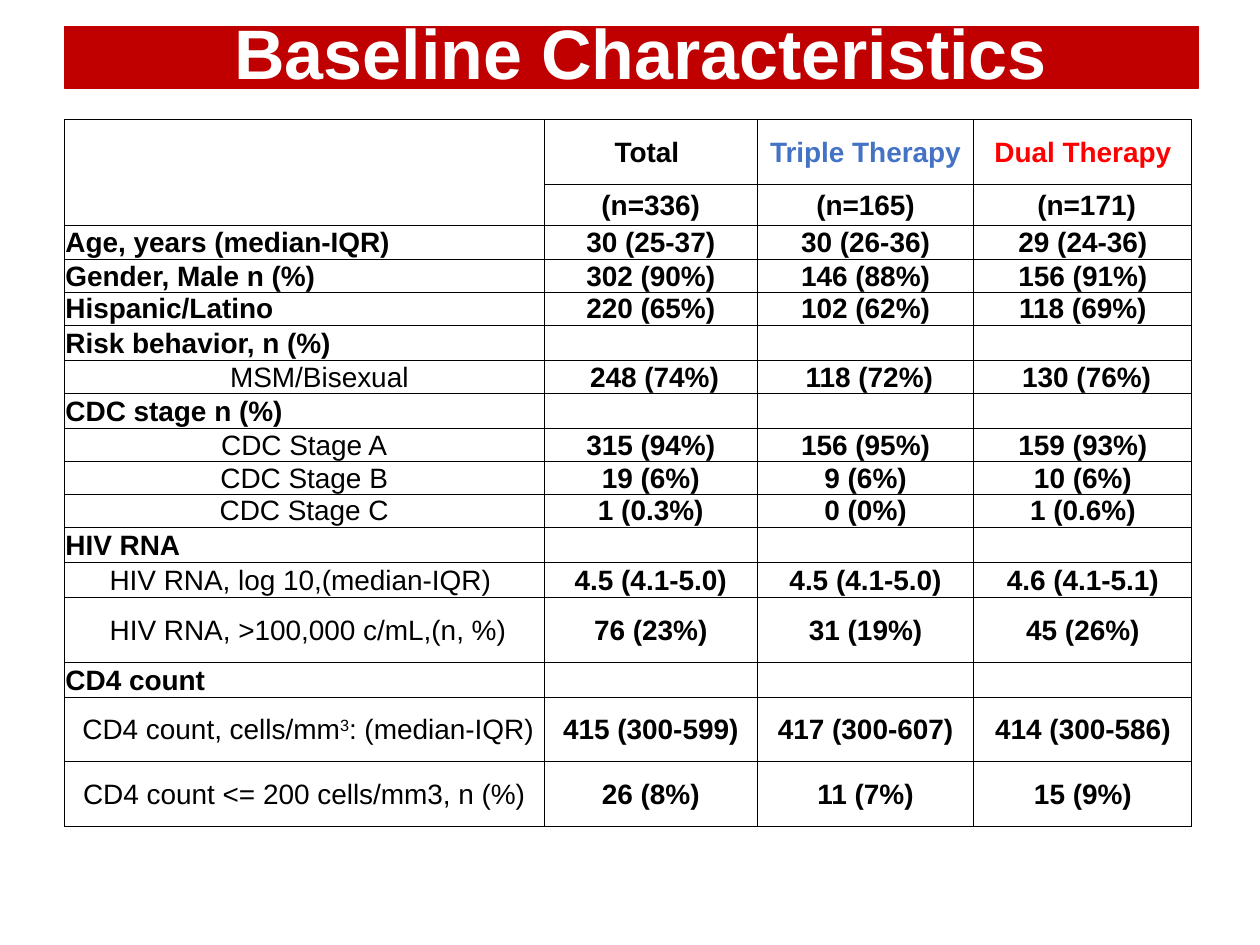
from lxml.etree import SubElement as Sub
from pptx import Presentation
from pptx.dml.color import RGBColor as Rgb
from pptx.enum.text import MSO_ANCHOR as Anchor, MSO_AUTO_SIZE as Fit, PP_ALIGN as Align
from pptx.oxml.ns import qn
from pptx.util import Inches, Pt

WIDE, HIGH = Inches(10), Inches(7.5)
FONT = "Arial"
HUES = {"bar": "C00000", "white": "FFFFFF", "ink": "000000",
        "triple": "4472C4", "dual": "FF0000"}

# Boxes are left, top, width and height in percent of the slide.
TITLE_BOX = (5.1, 2.8, 90, 6.53)
TABLE_BOX = (5.1, 12.67, 89.5, 73.6)

COLS = (3.81, 1.69, 1.72, 1.73)
SLIM, TALL = 0.26, 0.51
SPACE = 0.06  # one space of the table text, in inches

# Each row: height, label style, cells. Text between ^ marks is raised.
HEAD, ITEM = "head", "item"
ROWS = [
    (TALL, HEAD, "", "Total", "Triple Therapy", "Dual Therapy"),
    (0.33, HEAD, "", "(n=336)", "(n=165)", "(n=171)"),
    (0.27, HEAD, "Age, years (median-IQR)", "30 (25-37)", "30 (26-36)", "29 (24-36)"),
    (SLIM, HEAD, "Gender, Male n (%)", "302 (90%)", "146 (88%)", "156 (91%)"),
    (SLIM, HEAD, "Hispanic/Latino", "220 (65%)", "102 (62%)", "118 (69%)"),
    (SLIM, HEAD, "Risk behavior, n (%)", "", "", ""),
    (SLIM, ITEM, "MSM/Bisexual", "248 (74%)", "118 (72%)", "130 (76%)"),
    (SLIM, HEAD, "CDC stage n (%)", "", "", ""),
    (SLIM, ITEM, "CDC Stage A", "315 (94%)", "156 (95%)", "159 (93%)"),
    (SLIM, ITEM, "CDC Stage B", "19 (6%)", "9 (6%)", "10 (6%)"),
    (SLIM, ITEM, "CDC Stage C", "1 (0.3%)", "0 (0%)", "1 (0.6%)"),
    (SLIM, HEAD, "HIV RNA", "", "", ""),
    (0.28, ITEM, "HIV RNA, log 10,(median-IQR)",
     "4.5 (4.1-5.0)", "4.5 (4.1-5.0)", "4.6 (4.1-5.1)"),
    (TALL, ITEM, "HIV RNA, >100,000 c/mL,(n, %)", "76 (23%)", "31 (19%)", "45 (26%)"),
    (SLIM, HEAD, "CD4 count", "", "", ""),
    (TALL, ITEM, "CD4 count, cells/mm^3^: (median-IQR)",
     "415 (300-599)", "417 (300-607)", "414 (300-586)"),
    (TALL, ITEM, "CD4 count <= 200 cells/mm3, n (%)", "26 (8%)", "11 (7%)", "15 (9%)"),
]
TINTS = {(0, 2): "triple", (0, 3): "dual"}
# Cells set off centre, in spaces: above zero to the right, below to the left.
SHIFTS = {(0, 1): -1, (1, 3): 1, (6, 0): 4, (6, 1): 1, (6, 2): 1, (6, 3): 1,
          (12, 0): -1, (13, 0): 1, (15, 0): 1}


def hue(name):
    return Rgb.from_string(HUES[name])


def place(box):
    """Turn percent of the slide into lengths."""
    return [int(part * side / 100) for part, side in zip(box, (WIDE, HIGH) * 2)]


def add_run(para, text, size, tint, bold=True):
    run = para.add_run()
    run.text = text
    font = run.font
    font.name, font.size, font.bold = FONT, Pt(size), bold
    font.color.rgb = hue(tint)
    return run


def add_title(slide, box):
    title = slide.shapes.title
    title.left, title.top, title.width, title.height = place(box)
    title.fill.solid()
    title.fill.fore_color.rgb = hue("bar")
    title.line.color.rgb = hue("bar")
    title.line.width = Pt(0.75)
    frame = title.text_frame
    frame.auto_size, frame.word_wrap = Fit.NONE, True
    frame.vertical_anchor = Anchor.MIDDLE
    frame.margin_left = Inches(0.25)
    para = frame.paragraphs[0]
    para.alignment, para.line_spacing = Align.CENTER, 0.9
    add_run(para, "Baseline Characteristics", 40, "white")


def frame_cell(cell):
    """Clear the fill and rule all four sides."""
    props = cell._tc.get_or_add_tcPr()
    for side in ("a:lnL", "a:lnR", "a:lnT", "a:lnB"):
        line = Sub(props, qn(side), w=str(Pt(0.5)))
        Sub(Sub(line, qn("a:solidFill")), qn("a:srgbClr"), val=HUES["ink"])
    cell.fill.background()


def fill_cell(cell, text, tint, bold, align, shift):
    frame_cell(cell)
    cell.vertical_anchor = Anchor.MIDDLE
    cell.margin_left = Inches(0.01 + SPACE * max(shift, 0))
    cell.margin_right = Inches(0.01 + SPACE * max(-shift, 0))
    cell.margin_top, cell.margin_bottom = Inches(0.01), 0
    para = cell.text_frame.paragraphs[0]
    para.alignment = align
    if not text:
        Sub(para._p, qn("a:endParaRPr"), sz="1600")
        return
    for spot, part in enumerate(text.split("^")):
        run = add_run(para, part, 16, tint, bold)
        if spot % 2:
            run._r.get_or_add_rPr().set("baseline", "30000")


def add_grid(slide, box):
    left, top, width, height = place(box)
    table = slide.shapes.add_table(len(ROWS), len(COLS), left, top, width, height).table
    table.first_row = table.horz_banding = False
    for col, share in zip(table.columns, COLS):
        col.width = int(width * share / sum(COLS))
    total = sum(row[0] for row in ROWS)
    for r, (share, style, *texts) in enumerate(ROWS):
        table.rows[r].height = int(height * share / total)
        for c, text in enumerate(texts):
            bold = c > 0 or style == HEAD
            align = Align.LEFT if c == 0 and style == HEAD else Align.CENTER
            fill_cell(table.cell(r, c), text, TINTS.get((r, c), "ink"),
                      bold, align, SHIFTS.get((r, c), 0))
    table.cell(0, 0).merge(table.cell(1, 0))


def main():
    deck = Presentation()
    deck.slide_width, deck.slide_height = WIDE, HIGH
    slide = deck.slides.add_slide(deck.slide_layouts[5])
    add_title(slide, TITLE_BOX)
    add_grid(slide, TABLE_BOX)
    deck.save("out.pptx")


if __name__ == "__main__":
    main()
